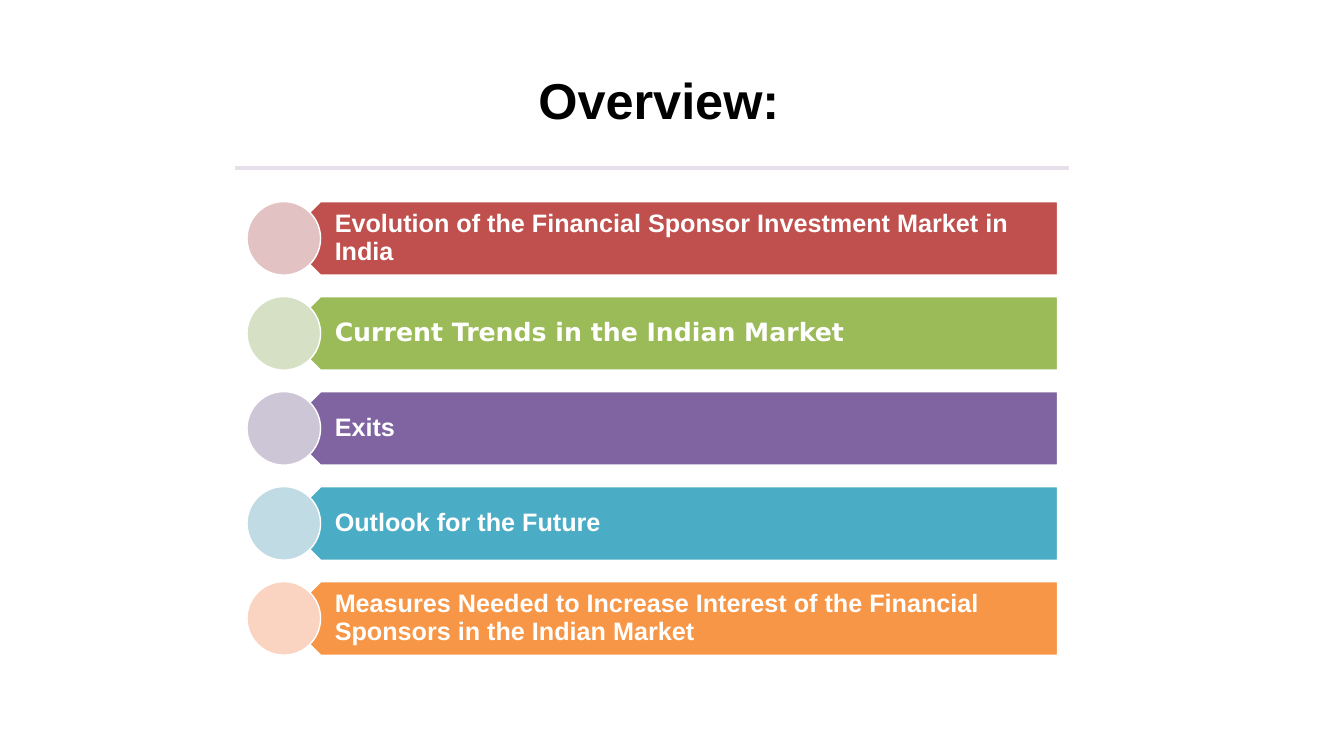
from lxml import etree
from pptx import Presentation
from pptx.dml.color import RGBColor
from pptx.enum.shapes import MSO_CONNECTOR as CONN, MSO_SHAPE as SHAPE
from pptx.enum.text import MSO_ANCHOR as ANCHOR, PP_ALIGN as ALIGN
from pptx.oxml.ns import qn
from pptx.util import Inches, Pt

# Agenda text, bar colour, circle colour, font
ITEMS = [
    ("Evolution of the Financial Sponsor Investment Market in India",
     "C0504D", "E2C2C2", "Arial"),
    ("Current Trends in the Indian Market", "9BBB59", "D5E0C4", "DejaVu Sans"),
    ("Exits", "8064A2", "CDC6D7", "Arial"),
    ("Outlook for the Future", "4BACC6", "C1DBE5", "Arial"),
    ("Measures Needed to Increase Interest of the Financial Sponsors "
     "in the Indian Market", "F79646", "FBD3C1", "Arial"),
]
ROW_H = 0.73


def rgb(hex_color):
    return RGBColor.from_string(hex_color)


def style_text(p, size, color, font):
    p.line_spacing = 0.9
    p.font.size = Pt(size)
    p.font.bold = True
    p.font.name = font
    p.font.color.rgb = rgb(color)


def add_filled(shapes, kind, x, y, w, h, fill):
    sp = shapes.add_shape(kind, Inches(x), Inches(y), Inches(w), Inches(h))
    sp.shadow.inherit = False
    sp.fill.solid()
    sp.fill.fore_color.rgb = rgb(fill)
    sp.line.color.rgb = rgb("FFFFFF")
    sp.line.width = Pt(1)
    return sp


def add_title(s, x, y, w, h):
    title = s.shapes.title
    title.left, title.top = Inches(x), Inches(y)
    title.width, title.height = Inches(w), Inches(h)
    tf = title.text_frame
    tf.text = "Overview:"
    tf.vertical_anchor = ANCHOR.MIDDLE
    p = tf.paragraphs[0]
    p.alignment = ALIGN.CENTER
    style_text(p, 36, "000000", "Arial")


def add_rule(s, x, y, w):
    rule = s.shapes.add_connector(CONN.STRAIGHT, Inches(x), Inches(y),
                                  Inches(x + w), Inches(y))
    rule.line.color.rgb = rgb("E6E0EC")
    rule.line.width = Pt(3)
    etree.SubElement(rule._element.spPr, qn("a:effectLst"))


def add_row(shapes, x, y, w, item):
    text, bar_color, circle_color, font = item
    # Bar pointing left, from the centre of the circle
    bar_x = x + ROW_H / 2
    bar = add_filled(shapes, SHAPE.PENTAGON, bar_x, y, x + w - bar_x, ROW_H, bar_color)
    bar.rotation = 180
    # Label, upright over the rotated bar
    label_x = x + 0.55
    label = shapes.add_textbox(Inches(label_x), Inches(y),
                               Inches(x + w - label_x), Inches(ROW_H))
    tf = label.text_frame
    tf.word_wrap = True
    tf.vertical_anchor = ANCHOR.MIDDLE
    tf.margin_left, tf.margin_right = Inches(0.32), Inches(0.14)
    tf.margin_top = tf.margin_bottom = Inches(0.07)
    p = tf.paragraphs[0]
    p.text = text
    style_text(p, 18, "FFFFFF", font)
    # Circle over the tip
    add_filled(shapes, SHAPE.OVAL, x, y, ROW_H, ROW_H, circle_color)


def add_agenda(s, x, y, w, h):
    group = s.shapes.add_group_shape()
    pitch = (h - ROW_H) / (len(ITEMS) - 1)
    for i, item in enumerate(ITEMS):
        add_row(group.shapes, x, y + i * pitch, w, item)


def main():
    prs = Presentation()
    prs.slide_width, prs.slide_height = Inches(13.33), Inches(7.5)
    s = prs.slides.add_slide(prs.slide_layouts[5])
    add_agenda(s, 2.45, 2, 8.04, 4.5)
    add_title(s, 0.77, 0.42, 11.53, 1.21)
    add_rule(s, 2.33, 1.67, 8.27)
    prs.save("out.pptx")


if __name__ == "__main__":
    main()
